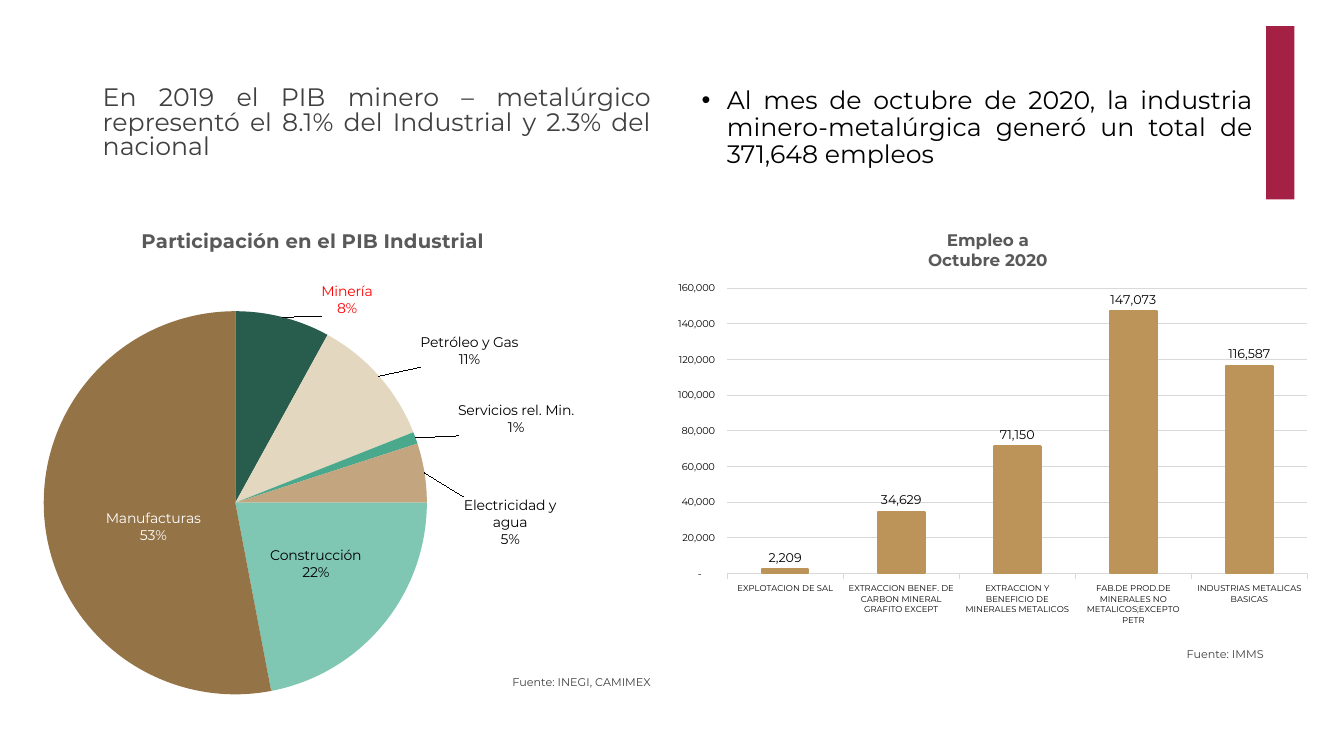
import pptx
import pptx.chart.data
import pptx.dml.color
import pptx.enum.chart
import pptx.enum.shapes
import pptx.enum.text
import pptx.oxml
import pptx.oxml.ns
import pptx.util

Pt = pptx.util.Pt
qn = pptx.oxml.ns.qn
Align = pptx.enum.text.PP_ALIGN
LabelPosition = pptx.enum.chart.XL_LABEL_POSITION
ChartType = pptx.enum.chart.XL_CHART_TYPE

FONT = "Montserrat"
NUMBER_FORMAT = '_-* #,##0_-;\\-* #,##0_-;_-* "-"??_-;_-@_'
COLORS = {
    "accent": "A42145", "black": "000000", "white": "FFFFFF", "red": "FF0000",
    "text": "404040", "title": "595959", "grid": "D9D9D9", "column": "BC945A",
    "green": "285C4D", "cream": "E3D7BF", "teal": "4AA88D",
    "tan": "C3A67F", "mint": "7FC7B2", "brown": "947346",
}
# name, percent, fill, label colour, label position, label offset
SECTORS = [
    ("Minería", 8, "green", "red", LabelPosition.OUTSIDE_END, (0.055, 0.01)),
    ("Petróleo y Gas", 11, "cream", "black", LabelPosition.OUTSIDE_END, (0.055, -0.01)),
    ("Servicios rel. Min.", 1, "teal", "black", LabelPosition.OUTSIDE_END, (0.055, 0)),
    ("Electricidad y agua", 5, "tan", "black", LabelPosition.OUTSIDE_END, (0.05, 0.15)),
    ("Construcción", 22, "mint", "black", LabelPosition.CENTER, (0.01, 0)),
    ("Manufacturas", 53, "brown", "white", LabelPosition.CENTER, (0.02, 0.03)),
]
JOBS = {
    "EXPLOTACION DE SAL": 2209,
    "EXTRACCION BENEF. DE CARBON MINERAL GRAFITO EXCEPT": 34629,
    "EXTRACCION Y BENEFICIO DE MINERALES METALICOS": 71150,
    "FAB.DE PROD.DE MINERALES NO METALICOS;EXCEPTO PETR": 147073,
    "INDUSTRIAS METALICAS BASICAS": 116587,
}


def rgb(name):
    return pptx.dml.color.RGBColor.from_string(COLORS[name])


def fill_solid(fill, color):
    fill.solid()
    fill.fore_color.rgb = rgb(color)


def format_font(font, size, color, bold=False):
    font.name = FONT
    font.size = Pt(size)
    font.bold = bold
    font.color.rgb = rgb(color)


def add_text(shape, box, text, size=18, color="text", align=Align.JUSTIFY,
             spacing=0.9, bullet=False):
    shape.left, shape.top, shape.width, shape.height = map(Pt, box)
    frame = shape.text_frame
    frame.word_wrap = True
    frame.auto_size = pptx.enum.text.MSO_AUTO_SIZE.NONE
    frame.vertical_anchor = pptx.enum.text.MSO_ANCHOR.TOP
    frame.text = text
    paragraph = frame.paragraphs[0]
    paragraph.alignment = align
    paragraph.line_spacing = spacing
    paragraph.space_before = Pt(0)
    if bullet:
        properties = paragraph._p.get_or_add_pPr()
        properties.set("marL", str(Pt(18)))
        properties.set("indent", str(Pt(-18)))
        namespace = pptx.oxml.ns.nsdecls("a")
        for xml in (f'<a:buFont {namespace} typeface="Arial"/>',
                    f'<a:buChar {namespace} char="•"/>'):
            properties.append(pptx.oxml.parse_xml(xml))
    format_font(paragraph.runs[0].font, size, color)


def set_layout(element, index, **values):
    """Place a chart part by fractions of the chart, as its child at index."""
    for layout in element.findall(qn("c:layout")):
        element.remove(layout)
    parts = "".join(f'<c:{key} val="{value}"/>' for key, value in values.items())
    element.insert(index, pptx.oxml.parse_xml(
        f'<c:layout {pptx.oxml.ns.nsdecls("c")}>'
        f"<c:manualLayout>{parts}</c:manualLayout></c:layout>"))


def add_chart(slide, kind, box, values, title, title_size, title_at, plot_box):
    data = pptx.chart.data.CategoryChartData()
    data.categories = list(values)
    data.add_series("Series 1", list(values.values()))
    chart = slide.shapes.add_chart(kind, *map(Pt, box), data).chart
    format_font(chart.font, 10, "black")
    chart.has_legend = False
    chart.has_title = True
    frame = chart.chart_title.text_frame
    frame.text = title
    for paragraph in frame.paragraphs:
        format_font(paragraph.runs[0].font, title_size, "title", bold=True)
    set_layout(chart.chart_title._element, 1, xMode="edge", yMode="edge",
               x=title_at[0], y=title_at[1])
    x, y, width, height = plot_box
    plot_area = chart._chartSpace.find(".//" + qn("c:plotArea"))
    set_layout(plot_area, 0, layoutTarget="inner", xMode="edge", yMode="edge",
               x=x, y=y, w=width, h=height)
    return chart


def show_name_and_percent(element):
    for tag, shown in (("showVal", 0), ("showCatName", 1), ("showPercent", 1)):
        element.find(qn(f"c:{tag}")).set("val", str(shown))
    separator = pptx.oxml.parse_xml(
        f'<c:separator {pptx.oxml.ns.nsdecls("c")}>\n</c:separator>')
    element.find(qn("c:showBubbleSize")).addnext(separator)


def add_pie(slide, box):
    values = {sector[0]: sector[1] for sector in SECTORS}
    chart = add_chart(slide, ChartType.PIE, box, values,
                      "Participación en el PIB Industrial", 14, (0.34, 0.03),
                      (0.2, 0.2, 0.57, 0.77))
    chart.plots[0].vary_by_categories = True
    series = chart.plots[0].series[0]
    labels = series.data_labels
    labels.number_format = "0%"
    labels.number_format_is_linked = False
    labels.position = LabelPosition.OUTSIDE_END
    format_font(labels.font, 10, "black")
    for index, (_, _, fill, color, position, _) in enumerate(SECTORS):
        point = series.points[index]
        fill_solid(point.format.fill, fill)
        format_font(point.data_label.font, 10, color)
        point.data_label.position = position
    show_name_and_percent(labels._element)
    for element, sector in zip(labels._element.findall(qn("c:dLbl")), SECTORS):
        show_name_and_percent(element)
        set_layout(element, 1, x=sector[5][0], y=sector[5][1])


def add_columns(slide, box):
    chart = add_chart(slide, ChartType.COLUMN_CLUSTERED, box, JOBS,
                      "Empleo a\nOctubre 2020", 12, (0.4, 0.03),
                      (0.1, 0.18, 0.88, 0.68))
    plot = chart.plots[0]
    plot.vary_by_categories = False
    plot.gap_width = 150
    series = plot.series[0]
    fill_solid(series.format.fill, "column")
    fill_solid(series.format.line.fill, "column")
    series.format.line.width = Pt(1.5)
    labels = series.data_labels
    labels.show_value = True
    labels.position = LabelPosition.OUTSIDE_END
    labels.number_format = NUMBER_FORMAT
    labels.number_format_is_linked = False
    format_font(labels.font, 9, "black")

    category_axis, value_axis = chart.category_axis, chart.value_axis
    format_font(category_axis.tick_labels.font, 6, "black")
    format_font(value_axis.tick_labels.font, 7, "black")
    value_axis.tick_labels.number_format = NUMBER_FORMAT
    value_axis.tick_labels.number_format_is_linked = False
    value_axis.minimum_scale, value_axis.maximum_scale = 0, 160000
    value_axis.major_unit = 20000
    value_axis.format.line.fill.background()
    for line in (category_axis.format.line, value_axis.major_gridlines.format.line):
        fill_solid(line.fill, "grid")
        line.width = Pt(0.75)


def add_accent(slide, box):
    shape = slide.shapes.add_shape(
        pptx.enum.shapes.MSO_SHAPE.RECTANGLE, *map(Pt, box))
    shape.shadow.inherit = False
    fill_solid(shape.fill, "accent")
    shape.line.fill.background()


def add_texts(slide):
    heading, left_source, jobs, right_source, unused = slide.placeholders
    unused._element.getparent().remove(unused._element)
    add_text(heading, (66.2, 59, 406, 65),
             "En 2019 el PIB minero – metalúrgico representó el 8.1% "
             "del Industrial y 2.3% del nacional", spacing=0.8)
    add_text(jobs, (494, 59, 408, 65),
             "Al mes de octubre de 2020, la industria minero-metalúrgica "
             "generó un total de 371,648 empleos", color="black", bullet=True)
    add_text(left_source, (66.2, 480.2, 406, 16.6), "Fuente: INEGI, CAMIMEX",
             size=8, align=Align.RIGHT)
    add_text(right_source, (502, 460, 408, 16.6), "Fuente: IMMS",
             size=8, align=Align.RIGHT)


def main():
    presentation = pptx.Presentation()
    presentation.slide_width, presentation.slide_height = Pt(960), Pt(540)
    comparison_layout = presentation.slide_layouts[4]
    slide = presentation.slides.add_slide(comparison_layout)
    add_accent(slide, (904.3, 18.7, 20.2, 123.8))
    add_columns(slide, (472.3, 152, 471, 299.5))
    add_texts(slide)
    add_pie(slide, (-64.8, 149, 480.2, 359.3))
    presentation.save("out.pptx")


if __name__ == "__main__":
    main()
